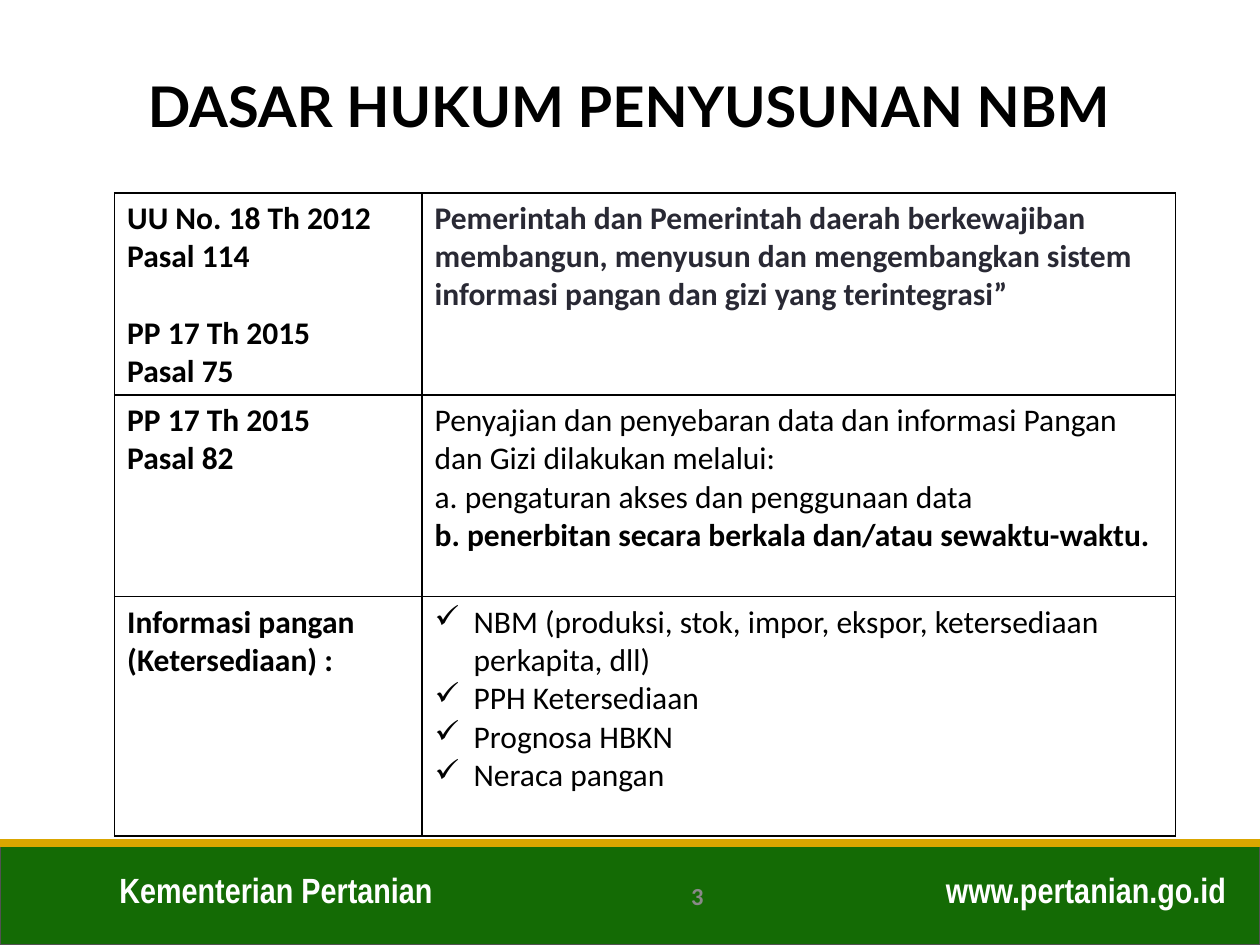
from lxml import etree
from pptx import Presentation
from pptx.dml.color import RGBColor
from pptx.enum.shapes import MSO_CONNECTOR, MSO_SHAPE
from pptx.enum.text import MSO_ANCHOR, PP_ALIGN
from pptx.oxml.ns import qn
from pptx.util import Inches, Pt

COLORS = {"black": "000000", "ink": "292934", "white": "FFFFFF", "gray": "898989",
          "green": "146B05", "gold": "DAA600", "edge": "525252"}

# Content: each paragraph is (text, options)
BOLD = {"bold": True}
CHECK = {"bullet": "✓"}
ROWS = [
    (1.6,
     [("UU No. 18 Th 2012 Pasal 114", BOLD),
      ("PP 17 Th 2015", {"bold": True, "before": 22}),
      ("Pasal 75", BOLD)],
     [("Pemerintah dan Pemerintah daerah berkewajiban membangun, menyusun dan "
       "mengembangkan sistem informasi pangan dan gizi yang terintegrasi”",
       {"bold": True, "color": "ink"})]),
    (1.6,
     [("PP 17 Th 2015", BOLD), ("Pasal 82", BOLD)],
     [("Penyajian dan penyebaran data dan informasi Pangan dan Gizi dilakukan melalui:", {}),
      ("a. pengaturan akses dan penggunaan data", {}),
      ("b. penerbitan secara berkala dan/atau sewaktu-waktu.", BOLD)]),
    (1.9,
     [("Informasi pangan (Ketersediaan) :", BOLD)],
     [("NBM (produksi, stok, impor, ekspor, ketersediaan perkapita, dll)", CHECK),
      ("PPH Ketersediaan", CHECK),
      ("Prognosa HBKN", CHECK),
      ("Neraca pangan", CHECK)]),
]
COLUMNS = [2.44, 5.98]

# Text boxes: text, (left, top, width, height), font, size, color, alignment, anchor
LABELS = [
    ("Kementerian Pertanian", (0.85, 6.84, 3.66, 0.44), "Arial Narrow", 20, "white",
     PP_ALIGN.LEFT, MSO_ANCHOR.TOP),
    ("www.pertanian.go.id", (7.05, 6.84, 2.78, 0.44), "Arial Narrow", 20, "white",
     PP_ALIGN.RIGHT, MSO_ANCHOR.TOP),
    ("3", (4.41, 6.91, 2.25, 0.4), "Calibri", 14, "gray",
     PP_ALIGN.CENTER, MSO_ANCHOR.MIDDLE),
]
TITLE = ("DASAR HUKUM PENYUSUNAN NBM", (0.98, 0.61, 8.03, 0.52), "Lato", 32, "black",
         PP_ALIGN.CENTER, MSO_ANCHOR.MIDDLE)


def rgb(name):
    return RGBColor.from_string(COLORS[name])


def style(para, font, size, color, bold):
    for span in para.runs:
        span.font.name = font
        span.font.size = Pt(size)
        span.font.bold = bold
        span.font.color.rgb = rgb(color)


def add_label(page, text, place, font, size, color, align, anchor):
    box = page.shapes.add_textbox(*map(Inches, place))
    frame = box.text_frame
    frame.word_wrap = True
    frame.vertical_anchor = anchor
    frame.text = text
    para = frame.paragraphs[0]
    para.alignment = align
    style(para, font, size, color, True)
    return para


def add_bullet(para, mark):
    props = para._p.get_or_add_pPr()
    props.set("marL", str(Inches(0.31)))
    props.set("indent", str(-Inches(0.31)))
    etree.SubElement(props, qn("a:buChar")).set("char", mark)


def add_borders(cell):
    props = cell._tc.get_or_add_tcPr()
    for index, side in enumerate(("a:lnL", "a:lnR", "a:lnT", "a:lnB")):
        line = etree.Element(qn(side), w=str(Pt(1)))
        fill = etree.SubElement(line, qn("a:solidFill"))
        etree.SubElement(fill, qn("a:srgbClr")).set("val", COLORS["black"])
        props.insert(index, line)


def fill_cell(cell, content):
    cell.fill.background()
    add_borders(cell)
    frame = cell.text_frame
    frame.text = "\n".join(text for text, _ in content)
    for para, (_, options) in zip(frame.paragraphs, content):
        style(para, "Calibri", 18, options.get("color", "black"), options.get("bold", False))
        if "before" in options:
            para.space_before = Pt(options["before"])
        if "bullet" in options:
            add_bullet(para, options["bullet"])


def main():
    deck = Presentation()
    deck.slide_width, deck.slide_height = Inches(10), Inches(7.5)
    page = deck.slides.add_slide(deck.slide_layouts[6])

    # Footer band with its gold rule
    band = page.shapes.add_shape(MSO_SHAPE.RECTANGLE, 0, Inches(6.69), Inches(10), Inches(0.81))
    band.shadow.inherit = False
    band.fill.solid()
    band.fill.fore_color.rgb = rgb("green")
    band.line.color.rgb = rgb("edge")
    band.line.width = Pt(1)
    rule = page.shapes.add_connector(MSO_CONNECTOR.STRAIGHT, 0, Inches(6.69),
                                     Inches(10), Inches(6.69))
    rule.line.color.rgb = rgb("gold")
    rule.line.width = Pt(4.5)
    etree.SubElement(rule._element.spPr, qn("a:effectLst"))

    # Footer texts and title
    for label in LABELS:
        add_label(page, *label)
    heading = add_label(page, *TITLE)
    heading.line_spacing = 0.9
    heading.space_before = Pt(10)

    # Table of legal bases
    height = sum(row[0] for row in ROWS)
    table = page.shapes.add_table(len(ROWS), len(COLUMNS), Inches(0.91), Inches(1.53),
                                  Inches(sum(COLUMNS)), Inches(height)).table
    table.first_row = table.horz_banding = False
    for column, width in zip(table.columns, COLUMNS):
        column.width = Inches(width)
    for row, (row_height, *contents) in zip(table.rows, ROWS):
        row.height = Inches(row_height)
        for cell, content in zip(row.cells, contents):
            fill_cell(cell, content)

    deck.save("out.pptx")


if __name__ == "__main__":
    main()
